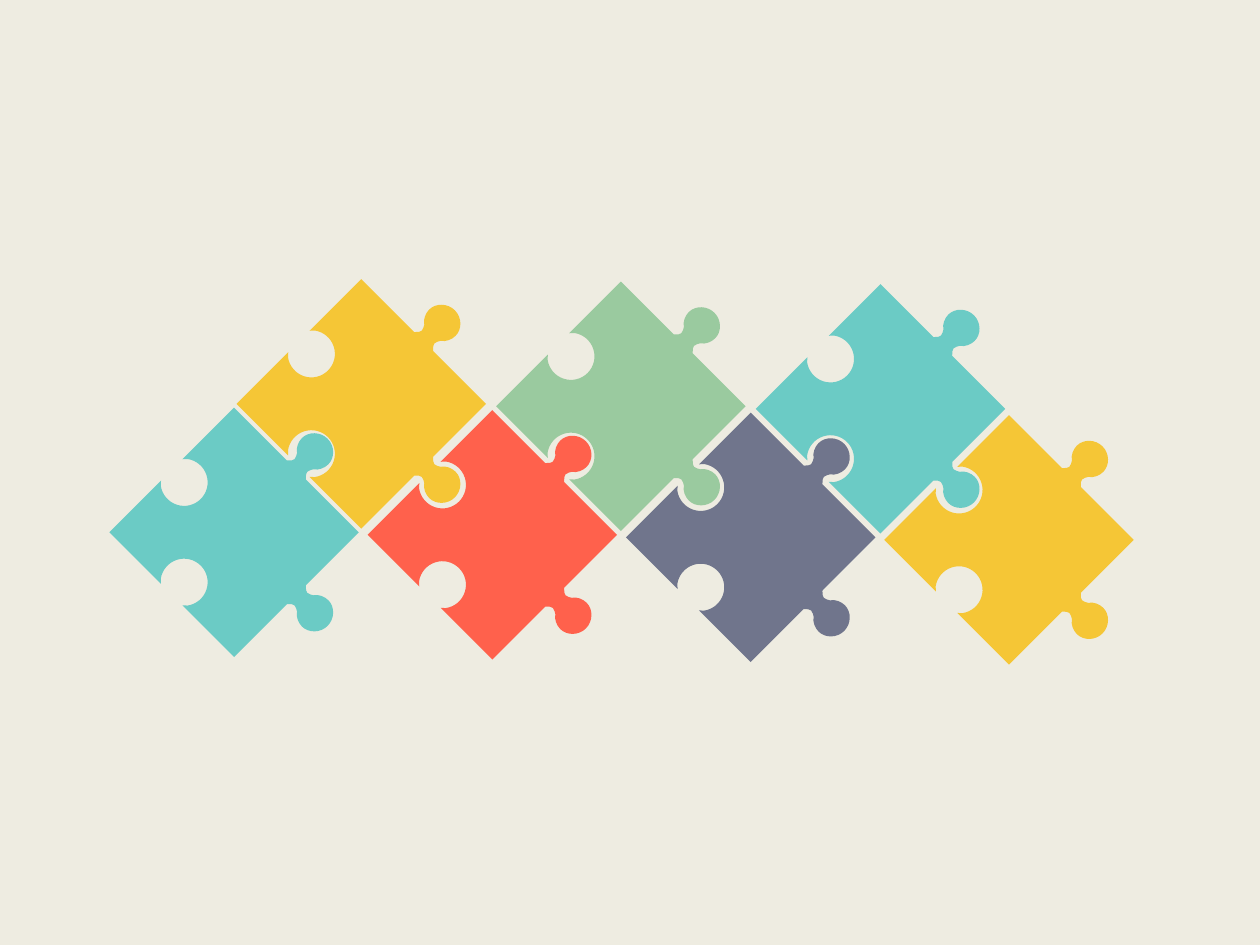
from math import asin, cos, pi, sin, tan

from lxml import etree
from pptx import Presentation
from pptx.dml.color import RGBColor
from pptx.oxml.ns import qn
from pptx.util import Inches

CREAM = RGBColor(0xEE, 0xEC, 0xE1)
YELLOW = RGBColor(0xF5, 0xC6, 0x36)
RED = RGBColor(0xFF, 0x61, 0x4C)
TEAL = RGBColor(0x6B, 0xCB, 0xC5)
GREEN = RGBColor(0x9A, 0xCA, 0x9F)
SLATE = RGBColor(0x70, 0x75, 0x8C)

# A piece is drawn on a grid of 175 units: a body of 140 and knobs of 35.
GRID, BODY, KNOB = 175, 140, 35
PIECE = Inches(1.75)

# Left half of a knob: (distance from the edge's middle, height above the edge).
# A segment of one point is a line, a segment of three is a cubic curve.
KNOB_HALF = [
    [(-10.6, 0)],
    [(-9.9, 0.7)],
    [(-8.5, 2.1), (-7.1, 3.5), (-7.1, 5)],
    [(-7.8, 7), (-7.8, 8.5), (-9.2, 9.9)],
    [(-12.7, 12), (-14.8, 17), (-14.8, 21)],
    [(-14.8, 28.5), (-8, KNOB), (0, KNOB)],
]
HOLE_RADIUS, HOLE_DEPTH, HOLE_LIP = 18.7, 13.9, 2.8

# Each row: left and top of the first piece, horizontal pitch, colours.
ROWS = [
    (2.24, 2.33, 2.06, [YELLOW, GREEN, TEAL]),
    (1.23, 3.35, 2.05, [TEAL, RED, SLATE, YELLOW]),
]
DRIFT = 0.02


def hole_half():
    start = -asin((HOLE_DEPTH - HOLE_LIP) / HOLE_RADIUS)
    step = (pi / 2 - start) / 2
    pull = 4 / 3 * tan(step / 4)

    def on_circle(a, shift=0):
        return (HOLE_RADIUS * (shift * sin(a) - cos(a)),
                -HOLE_DEPTH - HOLE_RADIUS * (sin(a) + shift * cos(a)))

    half = [[(-12, 0)], [on_circle(start)]]
    for a in (start, start + step):
        b = a + step
        half.append([on_circle(a, pull), on_circle(b, -pull), on_circle(b)])
    return half


def mirrored(half):
    """Add the right half of a profile, walked back from its middle."""
    points = [p for segment in half for p in segment]
    back = iter([(-u, v) for u, v in reversed(points[:-1])])
    return half + [[next(back) for _ in segment] for segment in half[:0:-1]]


def piece_outline():
    """Walk the four edges clockwise, each with its knob or hole."""
    knob, hole = mirrored(KNOB_HALF), mirrored(hole_half())
    edges = [
        ((0, KNOB), (1, 0), knob),
        ((BODY, KNOB), (0, 1), knob),
        ((BODY, GRID), (-1, 0), hole),
        ((0, GRID), (0, -1), hole),
    ]
    outline = []
    for (x, y), (dx, dy), profile in edges:
        outline.append([(x, y)])
        for segment in profile:
            outline.append([(x + dx * (BODY / 2 + u) + dy * v,
                             y + dy * (BODY / 2 + u) - dx * v) for u, v in segment])
    return outline


def bend_curves(sp, segments):
    """Turn each run of three line points into one cubic curve."""
    lines = iter(list(sp.element.iter(qn("a:lnTo"))))
    for segment in segments:
        run = [next(lines) for _ in segment]
        if len(run) == 3:
            curve = etree.Element(qn("a:cubicBezTo"))
            run[0].addprevious(curve)
            for line in run:
                curve.append(line[0])
                line.getparent().remove(line)


def add_piece(s, left, top, size, color):
    unit = size / GRID
    outline = piece_outline()
    points = [(x * unit, y * unit) for segment in outline for x, y in segment]
    builder = s.shapes.build_freeform(*points[0], scale=1.0)
    builder.add_line_segments(points[1:], close=True)
    sp = builder.convert_to_shape(left, top)
    bend_curves(sp, outline[1:])
    sp.rotation = 45
    sp.shadow.inherit = False
    sp.fill.solid()
    sp.fill.fore_color.rgb = color
    sp.line.fill.background()


def add_row(s, left, top, pitch, colors):
    for i, color in enumerate(colors):
        add_piece(s, Inches(left + i * pitch), Inches(top + i * DRIFT), PIECE, color)


def main():
    prs = Presentation()
    prs.slide_width, prs.slide_height = Inches(10), Inches(7.5)
    s = prs.slides.add_slide(prs.slide_layouts[6])
    s.background.fill.solid()
    s.background.fill.fore_color.rgb = CREAM
    for row in ROWS:
        add_row(s, *row)
    prs.save("out.pptx")


if __name__ == "__main__":
    main()
